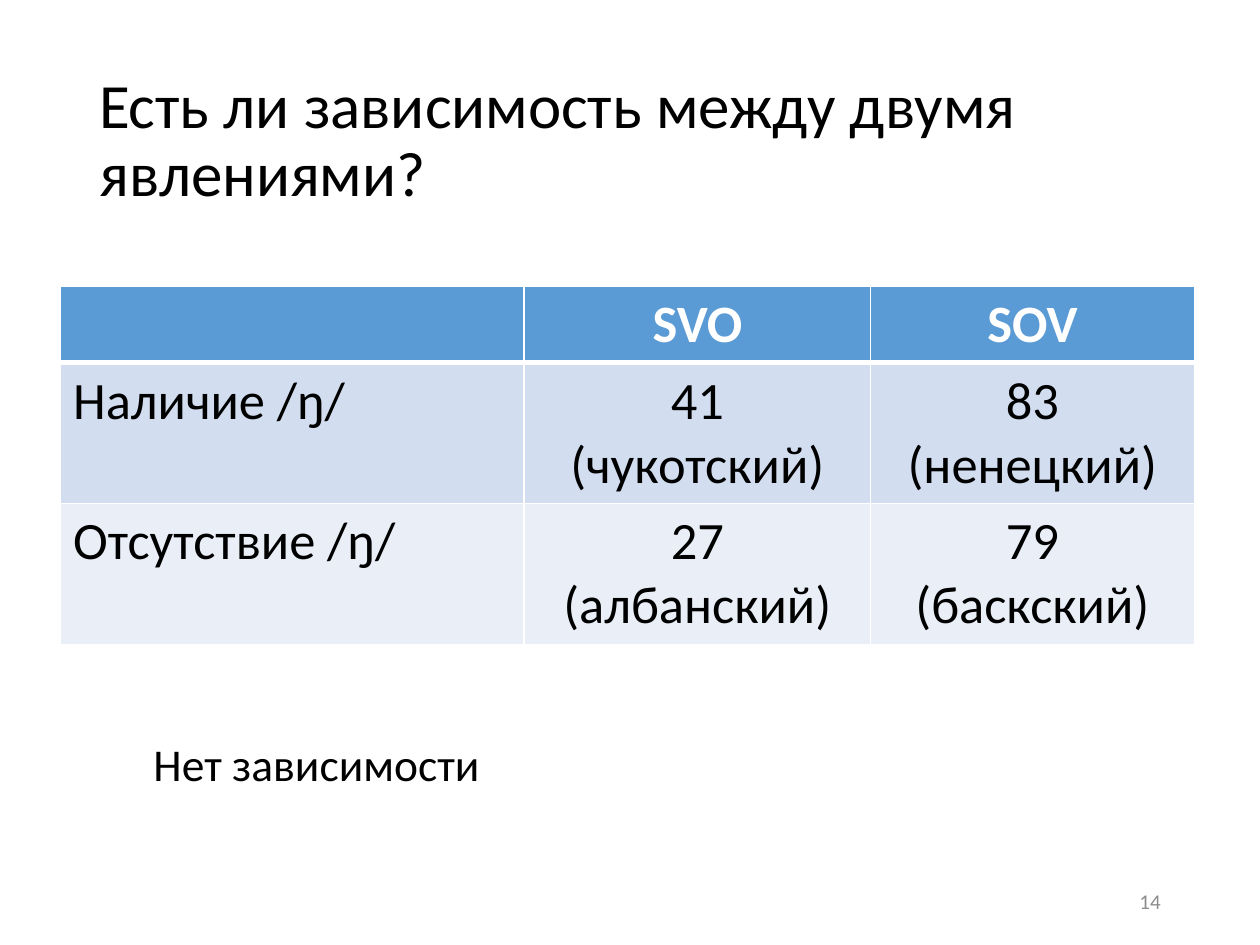
from lxml.etree import SubElement
from pptx import Presentation
from pptx.dml.color import RGBColor
from pptx.enum.text import MSO_ANCHOR as Anchor, MSO_AUTO_SIZE as AutoSize, PP_ALIGN as Align
from pptx.oxml.ns import qn
from pptx.util import Inches, Pt

FONT = "Calibri"
TITLE = "Есть ли зависимость между двумя явлениями?"
CONCLUSION = "Нет зависимости"
PAGE_NUMBER = "14"
ROWS = [
    ("", "SVO", "SOV"),
    ("Наличие /ŋ/", "41\n(чукотский)", "83\n(ненецкий)"),
    ("Отсутствие /ŋ/", "27\n(албанский)", "79\n(баскский)"),
]
COLUMN_WIDTHS = [3.68, 2.75, 2.57]
ROW_HEIGHTS = [0.6, 1.11, 1.11]
ROW_FILLS = ["5B9BD5", "D2DEEF", "EAEFF7"]


def color(hex_value):
    return RGBColor.from_string(hex_value)


def write(frame, text, size, hex_value, align=Align.LEFT, bold=False):
    frame.text = text
    for para in frame.paragraphs:
        para.alignment = align
        for span in para.runs:
            span.font.name = FONT
            span.font.size = Pt(size)
            span.font.bold = bold
            span.font.color.rgb = color(hex_value)


def add_text(page, area, text, size, hex_value, align=Align.LEFT, anchor=Anchor.TOP):
    box = page.shapes.add_textbox(*map(Inches, area))
    box.text_frame.word_wrap = True
    box.text_frame.vertical_anchor = anchor
    write(box.text_frame, text, size, hex_value, align)


def set_borders(cell, widths):
    properties = cell._tc.get_or_add_tcPr()
    for index, (side, width) in enumerate(widths.items()):
        line = SubElement(properties, qn(f"a:ln{side}"), w=str(Pt(width)))
        fill = SubElement(line, qn("a:solidFill"))
        SubElement(fill, qn("a:srgbClr"), val="FFFFFF")
        properties.insert(index, line)


def add_table(page):
    area = (0.48, 2.27, sum(COLUMN_WIDTHS), sum(ROW_HEIGHTS))
    table = page.shapes.add_table(len(ROWS), len(COLUMN_WIDTHS), *map(Inches, area)).table
    for column, width in zip(table.columns, COLUMN_WIDTHS):
        column.width = Inches(width)
    for row_index, texts in enumerate(ROWS):
        table.rows[row_index].height = Inches(ROW_HEIGHTS[row_index])
        header = row_index == 0
        for column_index, text in enumerate(texts):
            cell = table.cell(row_index, column_index)
            cell.fill.solid()
            cell.fill.fore_color.rgb = color(ROW_FILLS[row_index])
            set_borders(cell, {"L": 1, "R": 1, "T": 3 if row_index == 1 else 1, "B": 3 if header else 1})
            align = Align.CENTER if column_index else Align.LEFT
            write(cell.text_frame, text, 30, "FFFFFF" if header else "000000", align, header)


def main():
    deck = Presentation()
    deck.slide_width, deck.slide_height = Inches(10), Inches(7.5)
    page = deck.slides.add_slide(deck.slide_layouts[5])

    title = page.shapes.title
    title.left, title.top, title.width, title.height = map(Inches, (0.69, 0.4, 8.62, 1.45))
    write(title.text_frame, TITLE, 36, "000000")
    title.text_frame.auto_size = AutoSize.NONE
    title.text_frame.vertical_anchor = Anchor.MIDDLE
    title.text_frame.paragraphs[0].line_spacing = 0.9

    add_table(page)
    add_text(page, (7.06, 6.95, 2.25, 0.4), PAGE_NUMBER, 12, "8C8C8C", Align.RIGHT, Anchor.MIDDLE)
    add_text(page, (1.12, 5.79, 7.76, 0.54), CONCLUSION, 26, "000000")
    deck.save("out.pptx")


if __name__ == "__main__":
    main()
